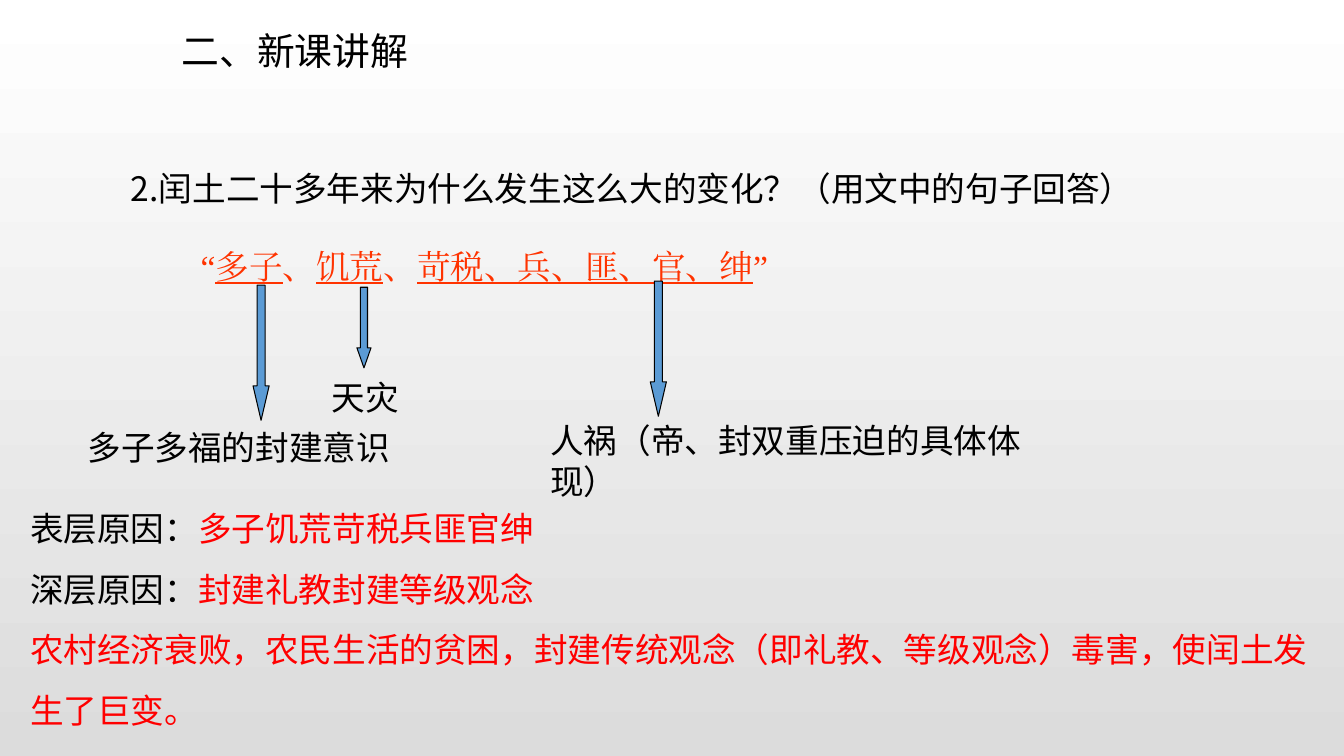
from pptx import Presentation
from pptx.dml.color import RGBColor
from pptx.enum.shapes import MSO_SHAPE
from pptx.enum.text import MSO_ANCHOR, MSO_AUTO_SIZE, PP_ALIGN
from pptx.util import Emu, Pt
from lxml.etree import SubElement
from pptx.oxml.ns import qn

PX = 9144  # 100 px to the inch
COLORS = {
    "black": "000000",
    "red": "FF0000",
    "orange": "FF3300",
    "blue": "5B9BD5",
    "white": "FFFFFF",
    "grey": "DCDCDC",
}
SANS, LATIN, SERIF = "Noto Sans CJK SC", "Arial", "Times New Roman"


def rgb(name):
    return RGBColor.from_string(COLORS[name])


def emu(*lengths):
    return [Emu(length * PX) for length in lengths]


class LessonSlide:
    def __init__(self, deck):
        self.slide = deck.slides.add_slide(deck.slide_layouts[5])

    def background(self, top, bottom):
        fill = self.slide.background.fill
        fill.gradient()
        fill.gradient_angle = 270
        for stop, color in zip(fill.gradient_stops, (top, bottom)):
            stop.color.rgb = rgb(color)

    def title(self, box, text):
        heading = self.slide.shapes.title
        heading.left, heading.top, heading.width, heading.height = emu(*box)
        self.fill_frame(heading.text_frame, [[(text, "black", False)]], SANS, 27, 0.9)

    def text(self, box, paragraphs, font=LATIN, spacing=1.0):
        frame = self.slide.shapes.add_textbox(*emu(*box)).text_frame
        self.fill_frame(frame, paragraphs, font, 24, spacing)

    def fill_frame(self, frame, paragraphs, font, size, spacing):
        """Fill the frame; each paragraph is a list of (text, color, underlined)."""
        frame.word_wrap = True
        frame.auto_size = MSO_AUTO_SIZE.NONE
        frame.vertical_anchor = MSO_ANCHOR.TOP
        for index, parts in enumerate(paragraphs):
            paragraph = frame.add_paragraph() if index else frame.paragraphs[0]
            paragraph.alignment = PP_ALIGN.LEFT
            paragraph.line_spacing = spacing
            paragraph.font.size = Pt(size)
            paragraph.font.name = font
            for text, color, underlined in parts:
                run = paragraph.add_run()
                run.text = text
                run.font.color.rgb = rgb(color)
                if underlined:
                    run.font.underline = True
                east_asian = SubElement(run.font._element, qn("a:ea"))
                east_asian.set("typeface", font)

    def down_arrow(self, box, head):
        arrow = self.slide.shapes.add_shape(MSO_SHAPE.DOWN_ARROW, *emu(*box))
        arrow.adjustments[0] = 0.5
        arrow.adjustments[1] = head
        arrow.shadow.inherit = False
        arrow.fill.solid()
        arrow.fill.fore_color.rgb = rgb("blue")
        arrow.line.color.rgb = rgb("black")
        arrow.line.width = Pt(0.75)


def main():
    deck = Presentation()
    deck.slide_width, deck.slide_height = emu(1333, 750)
    lesson = LessonSlide(deck)
    lesson.background("white", "grey")
    lesson.title((170, 28, 280, 54), "二、新课讲解")

    question = "2.闰土二十多年来为什么发生这么大的变化？（用文中的句子回答）"
    lesson.text((120, 162, 1053, 50), [[(question, "black", False)]], SANS)

    quotation = ["“", "多子", "、", "饥荒", "、", "苛税、兵、匪、官、绅", "”"]
    quoted_parts = [(part, "orange", index % 2 == 1) for index, part in enumerate(quotation)]
    lesson.text((189, 223, 981, 66), [quoted_parts], SERIF, 1.4)

    causes = [
        ("多子多福的封建意识", (77, 423, 324, 106), 0.9, (251, 283, 16, 134), 2.14),
        ("天灾", (319, 369, 100, 50), 1.0, (354, 285, 14, 80), 1.42),
        ("人祸（帝、封双重压迫的具体体现）", (536, 412, 521, 95), 1.0, (645, 279, 16, 134), 2.14),
    ]
    for cause, box, spacing, arrow_box, head in causes:
        lesson.text(box, [[(cause, "black", False)]], spacing=spacing)
        lesson.down_arrow(arrow_box, head)

    conclusion = "农村经济衰败，农民生活的贫困，封建传统观念（即礼教、等级观念）毒害，使闰土发生了巨变。"
    reasons = [
        [("表层原因：", "black", False), ("多子饥荒苛税兵匪官绅", "red", False)],
        [("深层原因：", "black", False), ("封建礼教封建等级观念", "red", False)],
        [(conclusion, "red", False)],
    ]
    lesson.text((20, 479, 1313, 271), reasons, SANS, 1.5)
    deck.save("out.pptx")


if __name__ == "__main__":
    main()
